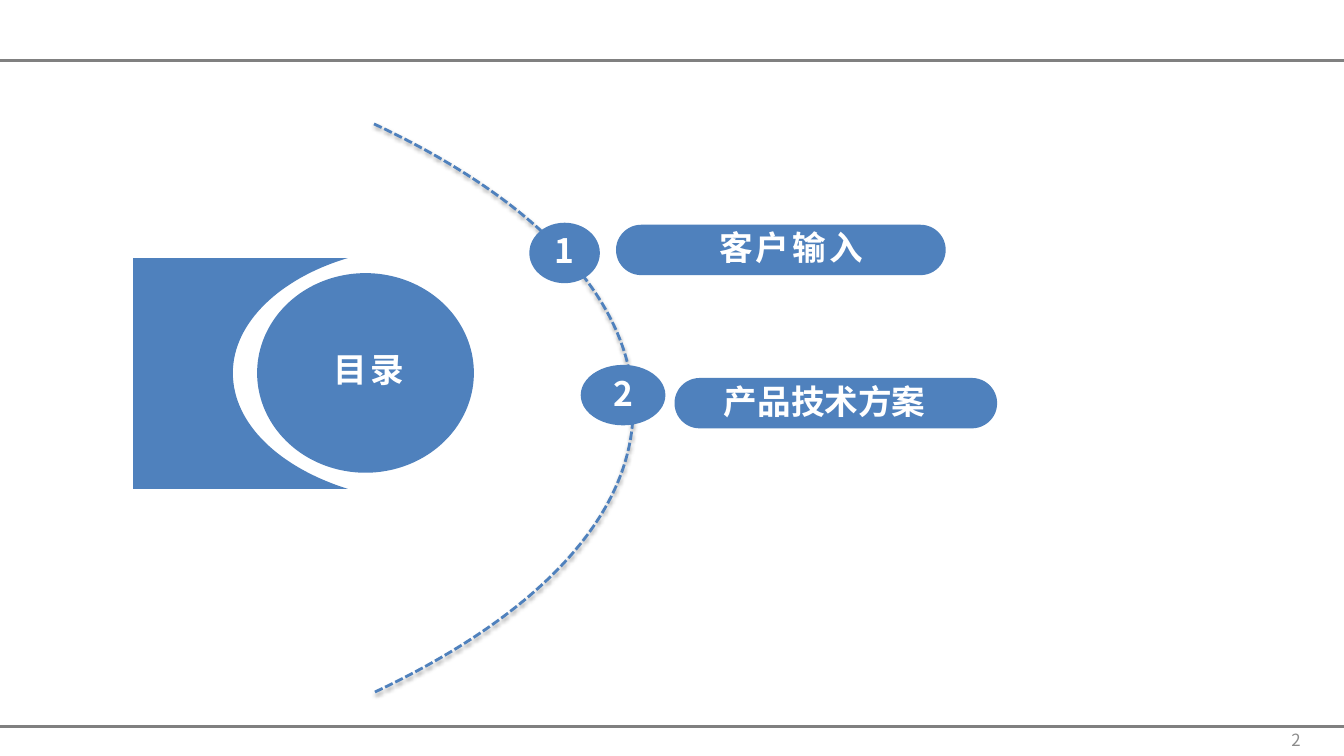
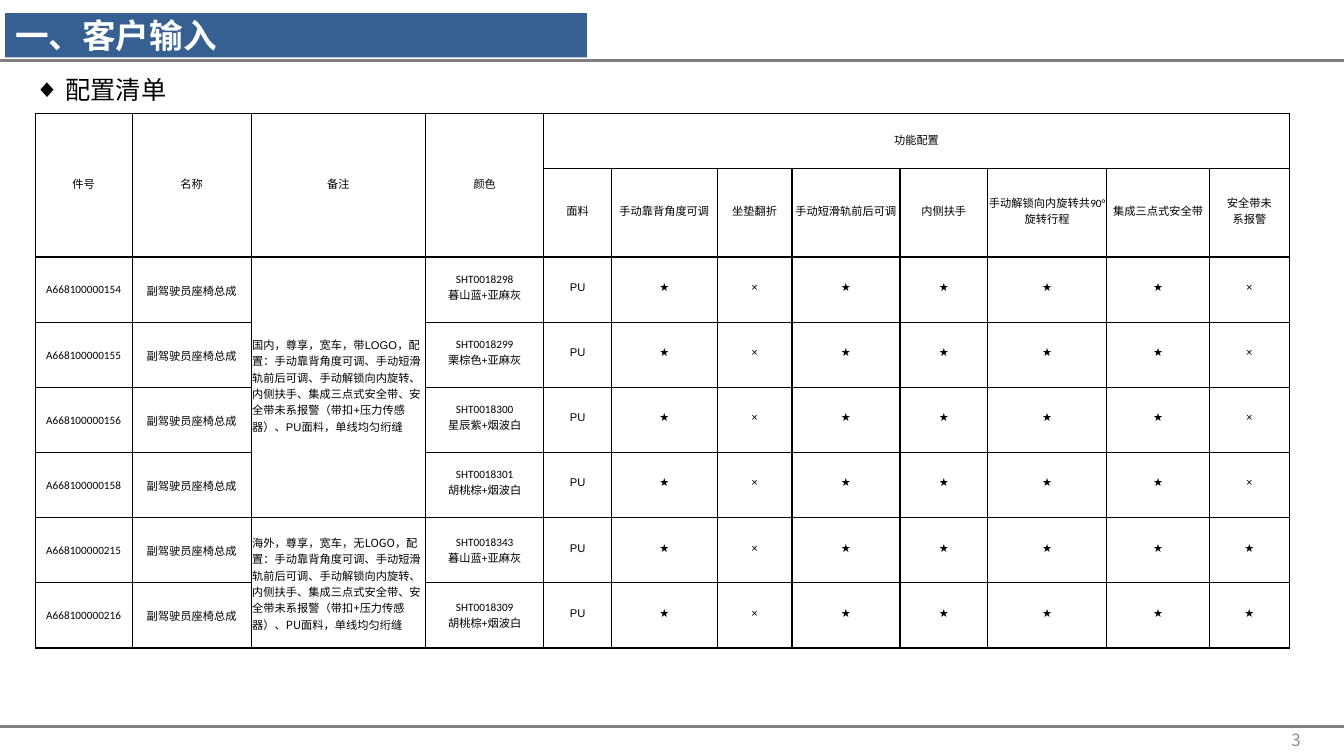
from pptx import Presentation
from pptx.dml.color import RGBColor
from pptx.enum.dml import MSO_LINE
from pptx.enum.shapes import MSO_CONNECTOR, MSO_SHAPE
from pptx.enum.text import MSO_ANCHOR, MSO_AUTO_SIZE, PP_ALIGN
from pptx.oxml.ns import qn
from pptx.util import Inches, Pt
from lxml.etree import SubElement

WIDTH, HEIGHT = 13.33, 7.5
FIRST_PAGE = 2
BLUE, BAND, GRAY, PAGE_GRAY = "4F81BD", "376092", "808080", "8C8C8C"
BLACK, WHITE = "000000", "FFFFFF"
CJK, LATIN, CODE = "Noto Sans CJK SC", "Arial", "Calibri"
HEADING = {"size": Pt(24), "bold": True, "name": CJK}
LIST_ITEM = {"size": Pt(18), "name": CJK}
PAGE_NUMBER = {"size": Pt(12), "name": CJK}

TABLE_WIDTH, TABLE_HEIGHT = 12.44, 5.3
COLUMNS = [0.96, 1.18, 1.73, 1.17, 0.67, 1.05, 0.74, 1.07, 0.87, 1.18, 1.02, 0.79]
HEADER_ROWS = [0.54, 0.88]
REMARK = ("配置：手动靠背角度可调、手动短滑轨前后可调、手动解锁向内旋转、内侧扶手、"
          "集成三点式安全带、安全带未系报警（带扣+压力传感器）、PU面料，单线均匀绗缝")
HEADERS = ["件号", "名称", "备注", "颜色", "功能配置"]
FEATURES = ["面料", "手动靠背角度可调", "坐垫翻折", "手动短滑轨前后可调", "内侧扶手",
            "手动解锁向内旋转共90°旋转行程", "集成三点式安全带", "安全带未\n系报警"]
SEATS = [
    ("A668100000154", "国内，尊享，宽车，带LOGO，" + REMARK, "SHT0018298\n暮山蓝+亚麻灰", "×"),
    ("A668100000155", "", "SHT0018299\n栗棕色+亚麻灰", "×"),
    ("A668100000156", "", "SHT0018300\n星辰紫+烟波白", "×"),
    ("A668100000158", "", "SHT0018301\n胡桃棕+烟波白", "×"),
    ("A668100000215", "海外，尊享，宽车，无LOGO，" + REMARK, "SHT0018343\n暮山蓝+亚麻灰", "★"),
    ("A668100000216", "", "SHT0018309\n胡桃棕+烟波白", "★"),
]
# First and last cell of each merged block, as (row, column)
MERGES = [((0, column), (1, column)) for column in range(4)]
MERGES += [((0, 4), (0, 11)), ((2, 2), (5, 2)), ((6, 2), (7, 2))]


def color(hex_value):
    return RGBColor.from_string(hex_value)


def set_values(target, values):
    for name, value in values.items():
        setattr(target, name, value)


def place(shape, left, top, width, height):
    set_values(shape, {"left": Inches(left), "top": Inches(top),
                       "width": Inches(width), "height": Inches(height)})


def fill_solid(shape, hex_value):
    shape.fill.solid()
    shape.fill.fore_color.rgb = color(hex_value)


def write(frame, text, font, hex_value, align=PP_ALIGN.LEFT, line_spacing=None, tracking=0):
    """Fill a text frame, one paragraph per line; tracking is in points."""
    frame.text = text
    for paragraph in frame.paragraphs:
        set_values(paragraph, {"alignment": align, "space_before": Pt(0),
                               "line_spacing": line_spacing})
        for run in paragraph.runs:
            set_values(run.font, font)
            run.font.color.rgb = color(hex_value)
            properties = run._r.get_or_add_rPr()
            SubElement(properties, qn("a:ea"), typeface=CJK)
            if tracking:
                properties.set("spc", str(int(tracking * 100)))


def set_frame(frame, anchor=MSO_ANCHOR.MIDDLE, margins=(0.1, 0.05, 0.1, 0.05)):
    """Margins run left, top, right, bottom in inches."""
    sides = ("margin_left", "margin_top", "margin_right", "margin_bottom")
    set_values(frame, dict(zip(sides, map(Inches, margins))))
    set_values(frame, {"word_wrap": True, "auto_size": MSO_AUTO_SIZE.NONE,
                       "vertical_anchor": anchor})


def add_filled_shape(slide, kind, box, text="", shift=0, tracking=0):
    """Blue preset shape; shift moves its centred text sideways."""
    shape = slide.shapes.add_shape(kind, *map(Inches, box))
    shape.shadow.inherit = False
    fill_solid(shape, BLUE)
    shape.line.fill.background()
    if kind == MSO_SHAPE.ROUNDED_RECTANGLE:
        shape.adjustments[0] = 0.5
    if text:
        set_frame(shape.text_frame, margins=(max(2 * shift, 0), 0, max(-2 * shift, 0), 0))
        write(shape.text_frame, text, HEADING, WHITE, PP_ALIGN.CENTER, 0.9, tracking)


def add_outline(slide, start, segments, close):
    """Each segment holds its end point, after two control points if it is curved."""
    ends = [tuple(map(Inches, segment[-1])) for segment in segments]
    builder = slide.shapes.build_freeform(*map(Inches, start))
    builder.add_line_segments(ends, close=close)
    shape = builder.convert_to_shape()
    shape.shadow.inherit = False
    lines = list(shape._element.iter(qn("a:lnTo")))
    for line, segment in zip(lines, segments):
        if len(segment) == 3:
            bend_segment(line, segment[:2], shape.left, shape.top)
    return shape


def bend_segment(line, controls, left, top):
    """Turn a straight path segment into a cubic curve."""
    parent = line.getparent()
    curve = SubElement(parent, qn("a:cubicBezTo"))
    parent.replace(line, curve)
    for x, y in controls:
        SubElement(curve, qn("a:pt"), x=str(Inches(x) - left), y=str(Inches(y) - top))
    curve.extend(list(line))


def add_soft_shadow(shape):
    effects = shape._element.spPr.find(qn("a:effectLst"))
    shadow = SubElement(effects, qn("a:outerShdw"), blurRad=str(Pt(3.1)), dist=str(Pt(1.6)),
                        dir="5400000", rotWithShape="0")
    shade = SubElement(shadow, qn("a:srgbClr"), val=BLACK)
    SubElement(shade, qn("a:alpha"), val="38000")


def add_master_rule(presentation, slide, top):
    """Draw a full-width rule and hand it to the master, so every slide shows it."""
    rule = slide.shapes.add_connector(MSO_CONNECTOR.STRAIGHT, 0, Inches(top),
                                      Inches(WIDTH), Inches(top))
    rule.line.color.rgb = color(GRAY)
    rule.line.width = Pt(2)
    SubElement(rule._element.spPr, qn("a:effectLst"))
    presentation.slide_master.shapes._spTree.append(rule._element)


def add_page_number(slide, number):
    box = slide.shapes.add_textbox(*map(Inches, (9.89, 7.14, 3.11, 0.4)))
    set_frame(box.text_frame)
    write(box.text_frame, str(number), PAGE_NUMBER, PAGE_GRAY, PP_ALIGN.RIGHT)
    paragraph = box.text_frame.paragraphs[0]
    run = paragraph.runs[0]._r
    field = SubElement(paragraph._p, qn("a:fld"), type="slidenum",
                       id="{B6F15528-21DE-4FAA-801E-634DDDAF4B2B}")
    field.extend(list(run))
    paragraph._p.remove(run)


def add_numbered_slide(presentation, layout_index):
    slide = presentation.slides.add_slide(presentation.slide_layouts[layout_index])
    add_page_number(slide, FIRST_PAGE + len(presentation.slides) - 1)
    return slide


def format_title(slide, text, box, **options):
    """Format the title and bring it to the front."""
    title = slide.shapes.title
    place(title, *box)
    set_frame(title.text_frame)
    write(title.text_frame, text, HEADING, WHITE, **options)
    slide.shapes._spTree.append(title._element)
    return title


def format_list_item(placeholder, text, box):
    place(placeholder, *box)
    set_frame(placeholder.text_frame, MSO_ANCHOR.TOP)
    write(placeholder.text_frame, text, LIST_ITEM, BLACK)
    properties = placeholder.text_frame.paragraphs[0]._p.get_or_add_pPr()
    indent = Inches(0.31)
    properties.set("marL", str(indent))
    properties.set("indent", str(-indent))
    SubElement(properties, qn("a:buChar"), char="◆")


def add_borders(cell):
    properties = cell._tc.get_or_add_tcPr()
    for side in ("a:lnL", "a:lnR", "a:lnT", "a:lnB"):
        line = SubElement(properties, qn(side), w=str(Pt(1)))
        SubElement(SubElement(line, qn("a:solidFill")), qn("a:srgbClr"), val=BLACK)


def cell_font(row, column):
    if column == 2 and row == 6:
        return CJK
    is_code = row >= 2 and column in (0, 3)
    return CODE if is_code or (row, column) == (1, 9) else LATIN


def format_cell(cell, row, column, text):
    add_borders(cell)
    cell.fill.background()
    flush = row >= 2 and (column < 2 or row >= 6 and column < 4)
    margin = Inches(0.01)
    set_values(cell, {"margin_left": margin, "margin_top": margin, "margin_right": margin,
                      "margin_bottom": Inches(0 if flush else 0.05),
                      "vertical_anchor": MSO_ANCHOR.MIDDLE})
    if text:
        align = PP_ALIGN.LEFT if row >= 2 and column == 2 else PP_ALIGN.CENTER
        write(cell.text_frame, text, {"size": Pt(8), "name": cell_font(row, column)},
              BLACK, align)


def add_configuration_table(slide):
    seat_height = (TABLE_HEIGHT - sum(HEADER_ROWS)) / len(SEATS)
    heights = HEADER_ROWS + [seat_height] * len(SEATS)
    frame = slide.shapes.add_table(len(heights), len(COLUMNS), Inches(0.35), Inches(1.13),
                                   Inches(TABLE_WIDTH), Inches(TABLE_HEIGHT))
    table = frame.table
    set_values(table, {"first_row": False, "horz_banding": False})
    for column, width in zip(table.columns, COLUMNS):
        column.width = Inches(width * TABLE_WIDTH / sum(COLUMNS))
    for row, height in zip(table.rows, heights):
        row.height = Inches(height)
    content = [HEADERS + [""] * 7, [""] * 4 + FEATURES]
    for number, remark, finish, belt_alarm in SEATS:
        content.append([number, "副驾驶员座椅总成", remark, finish, "PU",
                        "★", "×", "★", "★", "★", "★", belt_alarm])
    for row, texts in enumerate(content):
        for column, text in enumerate(texts):
            format_cell(table.cell(row, column), row, column, text)
    for first, last in MERGES:
        table.cell(*first).merge(table.cell(*last))


def build_contents(presentation):
    slide = add_numbered_slide(presentation, 5)
    for top in (0.6, 7.21):
        add_master_rule(presentation, slide, top)

    panel = add_outline(slide, (3.45, 4.85), [
        [(1.32, 4.85)],
        [(1.32, 2.56)],
        [(3.45, 2.56)],
        [(2.78, 2.76), (2.31, 3.2), (2.31, 3.7)],
        [(2.31, 4.21), (2.78, 4.64), (3.45, 4.85)],
    ], True)
    fill_solid(panel, BLUE)
    panel.line.fill.background()

    arc = add_outline(slide, (3.71, 1.23), [
        [(5.31, 1.98), (6.28, 2.97), (6.28, 4.05)],
        [(6.28, 5.13), (5.31, 6.12), (3.71, 6.87)],
    ], False)
    arc.fill.background()
    arc.line.color.rgb = color(BLUE)
    set_values(arc.line, {"width": Pt(2), "dash_style": MSO_LINE.SQUARE_DOT})
    arc.line._ln.find(qn("a:prstDash")).set("val", "sysDash")
    add_soft_shadow(arc)

    entries = [
        ("1", (5.25, 2.21, 0.7, 0.6), "客户输入", (6.11, 2.23, 3.27, 0.5), 0.1, 2.2),
        ("2", (5.76, 3.62, 0.84, 0.6), "产品技术方案", (6.69, 3.75, 3.2, 0.5), -0.11, 0),
    ]
    for number, badge, text, pill, shift, tracking in entries:
        add_filled_shape(slide, MSO_SHAPE.OVAL, badge, number)
        add_filled_shape(slide, MSO_SHAPE.ROUNDED_RECTANGLE, pill, text, shift, tracking)
    add_filled_shape(slide, MSO_SHAPE.OVAL, (2.55, 2.71, 2.15, 1.98))
    format_title(slide, "目录", (3.17, 3.45, 0.98, 0.48), align=PP_ALIGN.CENTER,
                 line_spacing=0.9, tracking=2.2)


def build_customer_input(presentation):
    slide = add_numbered_slide(presentation, 1)
    title = format_title(slide, "一、客户输入", (0.05, 0.13, 5.77, 0.44))
    fill_solid(title, BAND)
    format_list_item(slide.placeholders[1], "配置清单", (0.24, 0.69, 2.88, 0.4))
    add_configuration_table(slide)


def main():
    presentation = Presentation()
    set_values(presentation, {"slide_width": Inches(WIDTH), "slide_height": Inches(HEIGHT)})
    presentation.element.set("firstSlideNum", str(FIRST_PAGE))
    build_contents(presentation)
    build_customer_input(presentation)
    presentation.save("out.pptx")


if __name__ == "__main__":
    main()
